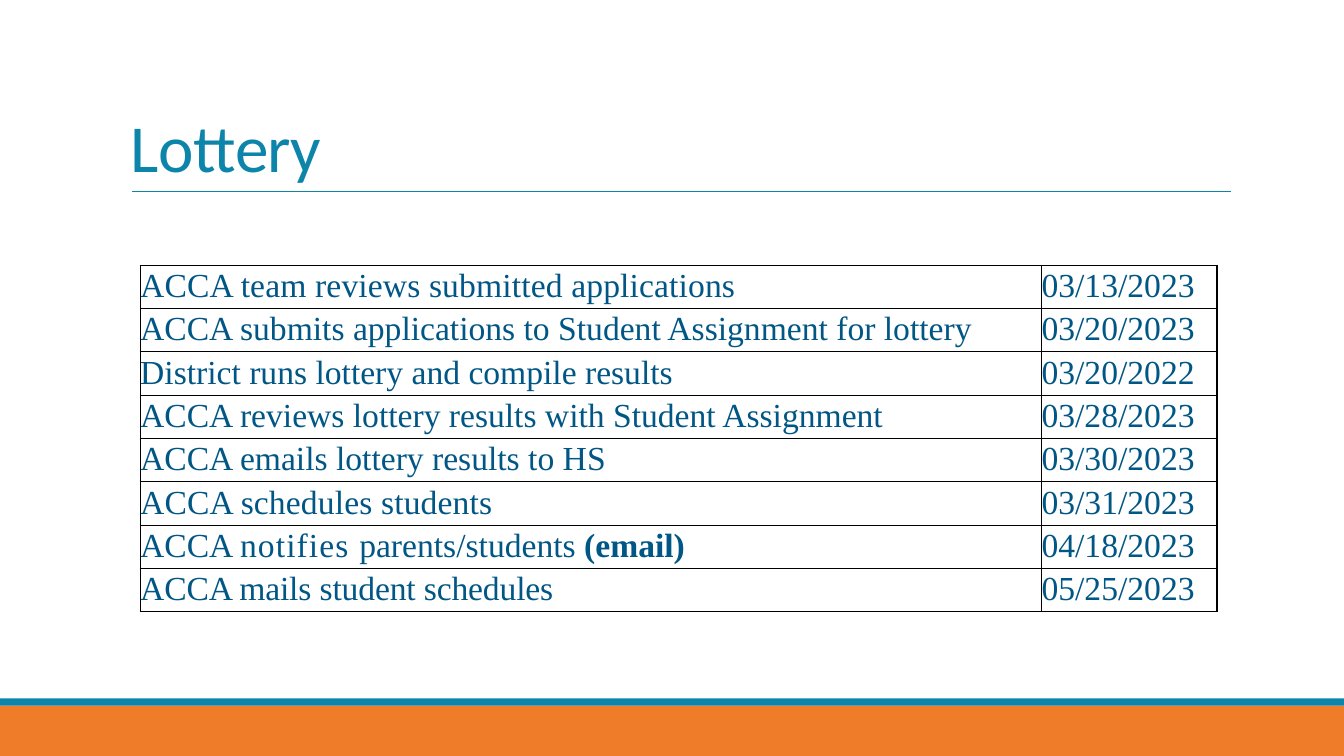
from lxml import etree
from pptx import Presentation
from pptx.dml.color import RGBColor
from pptx.enum import shapes, text
from pptx.oxml import ns
from pptx.util import Inches, Pt

ORANGE = RGBColor(0xEE, 0x7C, 0x29)
TEAL = RGBColor(0x0D, 0x85, 0xAB)
NAVY = RGBColor(0x00, 0x56, 0x85)
BORDER = RGBColor(0x00, 0x00, 0x00)

# Each task is a list of (wording, letter spacing in points, bold)
SCHEDULE = [
    ([("ACCA team reviews submitted applications", 0.1, False)], "03/13/2023"),
    ([("ACCA submits applications to Student Assignment for lottery", 0, False)],
     "03/20/2023"),
    ([("District runs lottery and compile results", 0, False)], "03/20/2022"),
    ([("ACCA reviews lottery results with Student Assignment", 0, False)],
     "03/28/2023"),
    ([("ACCA emails lottery results to HS", 0, False)], "03/30/2023"),
    ([("ACCA schedules students", 0.1, False)], "03/31/2023"),
    ([("ACCA ", 0, False), ("notifies ", 0.8, False),
      ("parents/students ", 0, False), ("(email)", 0, True)], "04/18/2023"),
    ([("ACCA mails student schedules", -0.1, False)], "05/25/2023"),
]
COLUMN_WIDTHS = (8.94, 1.74)
ROW_HEIGHT = 0.43


def add_span(para, wording, font_name, size, color, spacing=0, bold=False):
    span = para.add_run()
    span.text = wording
    span.font.name = font_name
    span.font.size = Pt(size)
    span.font.color.rgb = color
    span.font.bold = bold
    span.font._element.set("spc", str(round(spacing * 100)))


def add_band(page, top, height, color):
    band = page.shapes.add_shape(shapes.MSO_SHAPE.RECTANGLE, 0, Inches(top),
                                 Inches(13.33), Inches(height))
    band.shadow.inherit = False
    band.fill.solid()
    band.fill.fore_color.rgb = color
    band.line.fill.background()


def add_rule(page, left, right, top):
    rule = page.shapes.add_connector(shapes.MSO_CONNECTOR.STRAIGHT, Inches(left),
                                     Inches(top), Inches(right), Inches(top))
    rule.line.color.rgb = TEAL
    rule.line.width = Pt(0.5)
    etree.SubElement(rule._element.spPr, ns.qn("a:effectLst"))


def add_title(page, wording):
    box = page.shapes.add_textbox(Inches(1.2), Inches(0.31), Inches(11), Inches(1.59))
    frame = box.text_frame
    frame.word_wrap = True
    frame.vertical_anchor = text.MSO_ANCHOR.BOTTOM
    para = frame.paragraphs[0]
    para.line_spacing = 0.85
    add_span(para, wording, "Calibri", 48, TEAL, -0.5)


def add_borders(cell):
    properties = cell._tc.get_or_add_tcPr()
    for position, side in enumerate(("lnL", "lnR", "lnT", "lnB")):
        line = etree.Element(ns.qn(f"a:{side}"), w=str(Pt(1)))
        fill = etree.SubElement(line, ns.qn("a:solidFill"))
        etree.SubElement(fill, ns.qn("a:srgbClr"), val=str(BORDER))
        properties.insert(position, line)


def fill_cell(cell, spans):
    cell.margin_left = cell.margin_right = cell.margin_top = cell.margin_bottom = 0
    cell.fill.background()
    add_borders(cell)
    para = cell.text_frame.paragraphs[0]
    para.line_spacing = 1.07
    for wording, spacing, bold in spans:
        add_span(para, wording, "Times New Roman", 24, NAVY, spacing, bold)


def add_schedule(page):
    table = page.shapes.add_table(
        len(SCHEDULE), len(COLUMN_WIDTHS), Inches(1.39), Inches(2.63),
        Inches(sum(COLUMN_WIDTHS)), Inches(ROW_HEIGHT * len(SCHEDULE))).table
    table.first_row = table.horz_banding = False
    for column, width in zip(table.columns, COLUMN_WIDTHS):
        column.width = Inches(width)
    for row, (task, date) in zip(table.rows, SCHEDULE):
        row.height = Inches(ROW_HEIGHT)
        fill_cell(row.cells[0], task)
        fill_cell(row.cells[1], [(date, 0, False)])


def main():
    deck = Presentation()
    deck.slide_width, deck.slide_height = Inches(13.33), Inches(7.5)
    page = deck.slides.add_slide(deck.slide_layouts[6])

    # Footer bands
    add_band(page, 7, 0.5, ORANGE)
    add_band(page, 6.93, 0.07, TEAL)

    # Heading
    add_rule(page, 1.31, 12.21, 1.9)
    add_title(page, "Lottery")

    # Dates
    add_schedule(page)
    deck.save("out.pptx")


if __name__ == "__main__":
    main()
